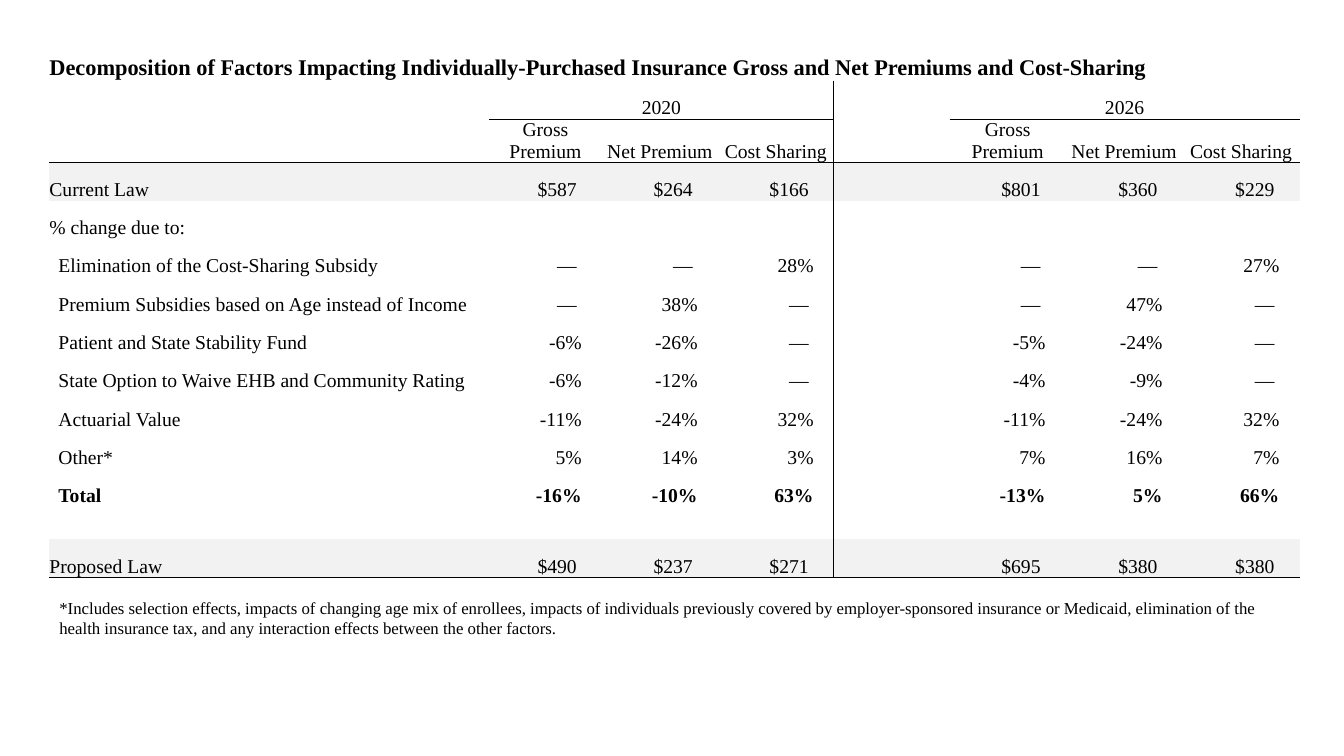
from lxml.etree import SubElement
from pptx import Presentation
from pptx.dml.color import RGBColor
from pptx.enum.text import MSO_ANCHOR as Anchor, PP_ALIGN as Align
from pptx.oxml.ns import qn
from pptx.util import Inches, Pt

TITLE = ("Decomposition of Factors Impacting Individually-Purchased Insurance "
         "Gross and Net Premiums and Cost-Sharing")
MEASURES = ["Gross Premium", "Net Premium", "Cost Sharing"]
YEAR_COLUMNS = {"2020": 1, "2026": 5}
FACTORS = [
    ("Current Law", ["$587", "$264", "$166"], ["$801", "$360", "$229"]),
    ("% change due to:", [""] * 3, [""] * 3),
    ("Elimination of the Cost-Sharing Subsidy", ["—", "—", "28%"], ["—", "—", "27%"]),
    ("Premium Subsidies based on Age instead of Income", ["—", "38%", "—"], ["—", "47%", "—"]),
    ("Patient and State Stability Fund", ["-6%", "-26%", "—"], ["-5%", "-24%", "—"]),
    ("State Option to Waive EHB and Community Rating", ["-6%", "-12%", "—"], ["-4%", "-9%", "—"]),
    ("Actuarial Value", ["-11%", "-24%", "32%"], ["-11%", "-24%", "32%"]),
    ("Other*", ["5%", "14%", "3%"], ["7%", "16%", "7%"]),
    ("Total", ["-16%", "-10%", "63%"], ["-13%", "5%", "66%"]),
    ("", [""] * 3, [""] * 3),
    ("Proposed Law", ["$490", "$237", "$271"], ["$695", "$380", "$380"]),
]
FOOTNOTE = ("*Includes selection effects, impacts of changing age mix of enrollees, impacts of "
            "individuals previously covered by employer-sponsored insurance or Medicaid, elimination "
            "of the health insurance tax, and any interaction effects between the other factors.")

FONT = "Times New Roman"
BLACK = RGBColor(0x00, 0x00, 0x00)
SHADE = RGBColor(0xF2, 0xF2, 0xF2)
LEFT, WIDTH = 0.49, 12.42
COLUMN_WIDTHS = [4.36, 1.12, 1.15, 1.15, 1.15, 1.15, 1.16, 1.16]
ROW_HEIGHT, SPACER_HEIGHT = 0.38, 0.32
TITLE_ROW, YEAR_ROW, MEASURE_ROW, FIRST_FACTOR_ROW = range(4)
GAP_COLUMN = 4
SHADED_LABELS = ("Current Law", "Proposed Law")
FLUSH_LABELS = SHADED_LABELS + ("% change due to:",)


def set_font(paragraph, size, bold=False):
    font = paragraph.font
    font.name, font.size, font.bold = FONT, Pt(size), bold
    font.color.rgb = BLACK


def padded(value):
    return value + " " if value and not value.endswith("%") else value


def set_borders(cell, ruled_sides):
    properties = cell._tc.get_or_add_tcPr()
    for side in "LRTB":
        ruled = side in ruled_sides
        line = SubElement(properties, qn(f"a:ln{side}"), w=str(Pt(0.5) if ruled else 0))
        fill = SubElement(line, qn("a:solidFill" if ruled else "a:noFill"))
        if ruled:
            SubElement(fill, qn("a:srgbClr"), val=str(BLACK))


def ruled_sides(row, column):
    under_row = {YEAR_ROW: column not in (0, GAP_COLUMN), MEASURE_ROW: True, last_row: True}
    sides = ""
    if row > TITLE_ROW:
        sides += {GAP_COLUMN - 1: "R", GAP_COLUMN: "L"}.get(column, "")
    if under_row.get(row):
        sides += "B"
    if under_row.get(row - 1):
        sides += "T"
    return sides


def write(row, column, text, align=Align.LEFT, size=14, bold=False, left=0, right=0, shaded=False):
    cell = table.cell(row, column)
    cell.text = text
    cell.vertical_anchor = Anchor.BOTTOM
    cell.margin_left, cell.margin_right = Inches(left), Inches(right)
    cell.margin_top = cell.margin_bottom = 0
    paragraph = cell.text_frame.paragraphs[0]
    paragraph.alignment = align
    set_font(paragraph, size, bold)
    set_borders(cell, ruled_sides(row, column))
    if shaded:
        cell.fill.solid()
        cell.fill.fore_color.rgb = SHADE
    else:
        cell.fill.background()


deck = Presentation()
deck.slide_width, deck.slide_height = Inches(13.33), Inches(7.5)
slide = deck.slides.add_slide(deck.slide_layouts[6])

row_count = FIRST_FACTOR_ROW + len(FACTORS)
last_row = row_count - 1
table_height = ROW_HEIGHT * (row_count - 1) + SPACER_HEIGHT
table = slide.shapes.add_table(row_count, len(COLUMN_WIDTHS), Inches(LEFT), Inches(0.42),
                               Inches(WIDTH), Inches(table_height)).table
table.first_row = table.horz_banding = False
for table_column, width in zip(table.columns, COLUMN_WIDTHS):
    table_column.width = Inches(width)
for table_row in table.rows:
    table_row.height = Inches(ROW_HEIGHT)
table.rows[last_row - 1].height = Inches(SPACER_HEIGHT)

headings = {(TITLE_ROW, 0): TITLE}
for year, first_column in YEAR_COLUMNS.items():
    headings[YEAR_ROW, first_column] = year
    for offset, measure in enumerate(MEASURES):
        headings[MEASURE_ROW, first_column + offset] = measure
for row in range(FIRST_FACTOR_ROW):
    is_title = row == TITLE_ROW
    for column in range(len(COLUMN_WIDTHS)):
        write(row, column, headings.get((row, column), ""),
              align=Align.LEFT if is_title else Align.CENTER,
              size=16 if is_title else 14, bold=is_title)

table.cell(TITLE_ROW, 0).merge(table.cell(TITLE_ROW, len(COLUMN_WIDTHS) - 1))
for first_column in YEAR_COLUMNS.values():
    table.cell(YEAR_ROW, first_column).merge(table.cell(YEAR_ROW, first_column + 2))

for row, (label, values_2020, values_2026) in enumerate(FACTORS, FIRST_FACTOR_ROW):
    look = {"bold": label == "Total", "shaded": label in SHADED_LABELS}
    write(row, 0, label, left=0 if label in FLUSH_LABELS else 0.09, **look)
    for column, value in enumerate(values_2020 + [""] + values_2026, 1):
        write(row, column, padded(value), align=Align.RIGHT, right=0.2, **look)

footnote = slide.shapes.add_textbox(Inches(LEFT), Inches(5.88), Inches(WIDTH), Inches(0.5)).text_frame
footnote.word_wrap = True
footnote.text = FOOTNOTE
set_font(footnote.paragraphs[0], 12)

deck.save("out.pptx")
